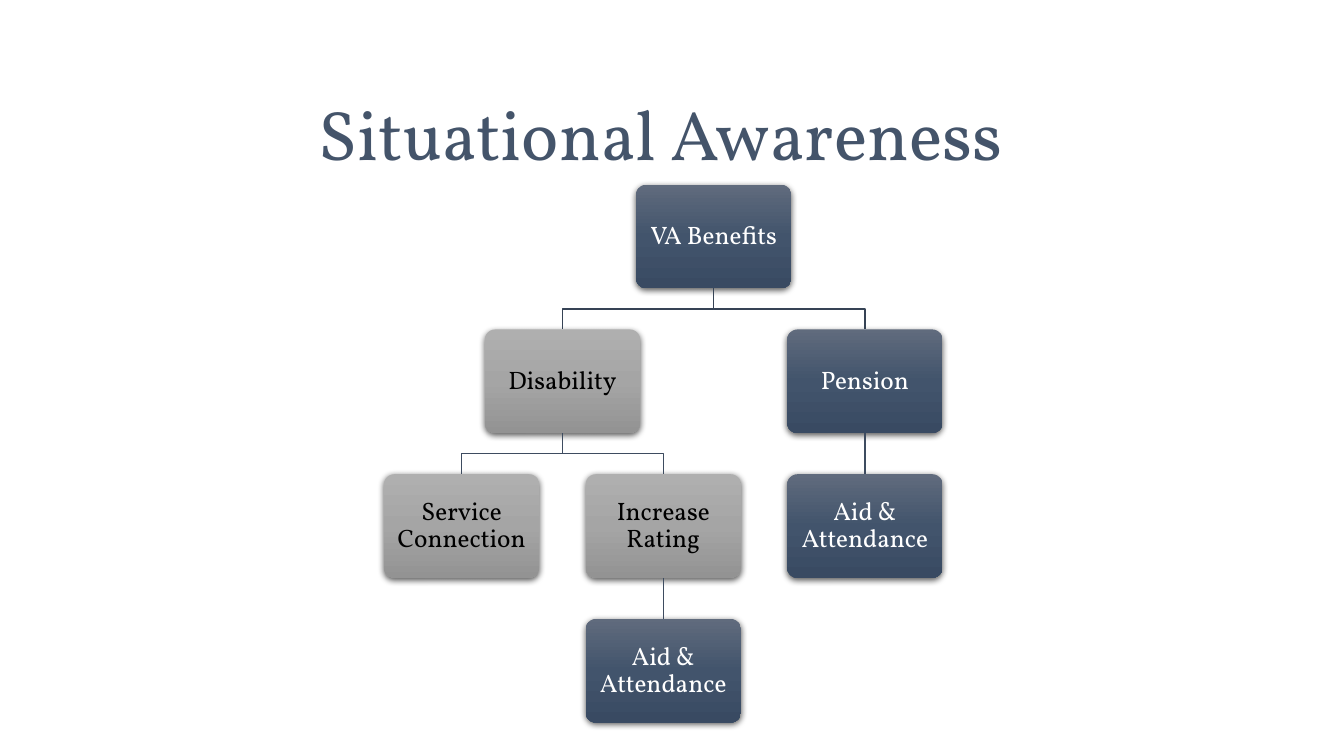
from dataclasses import dataclass

from lxml.etree import SubElement
from pptx import Presentation
from pptx.dml.color import RGBColor
from pptx.enum.shapes import MSO_CONNECTOR, MSO_SHAPE
from pptx.enum.text import MSO_ANCHOR, MSO_AUTO_SIZE, PP_ALIGN
from pptx.oxml.ns import qn
from pptx.util import Pt

FONT = "Vollkorn"
TITLE_COLOR = "44546A"
NAVY = ("606B7D", "42546C", "394A62")
GRAY = ("AFAFAF", "A5A5A5", "939393")
TEXT_ON = {NAVY: "FFFFFF", GRAY: "000000"}
TOP_LINK, LOWER_LINK = "364355", "3E4C60"

# Chart grid, in points
BOX_W, BOX_H = 111, 74
FIRST_CENTER, COLUMN_STEP = 329.8, 72
FIRST_TOP, ROW_STEP = 131.9, 103.4


@dataclass(frozen=True)
class Benefit:
    label: str
    column: float
    row: int
    shades: tuple[str, str, str]
    parent: str | None = None

    @property
    def center(self) -> float:
        return FIRST_CENTER + self.column * COLUMN_STEP

    @property
    def top(self) -> float:
        return FIRST_TOP + self.row * ROW_STEP


BENEFITS = {
    "benefits": Benefit("VA Benefits", 2.5, 0, NAVY),
    "disability": Benefit("Disability", 1, 1, GRAY, "benefits"),
    "service": Benefit("Service Connection", 0, 2, GRAY, "disability"),
    "increase": Benefit("Increase Rating", 2, 2, GRAY, "disability"),
    "increase_aid": Benefit("Aid & Attendance", 2, 3, NAVY, "increase"),
    "pension": Benefit("Pension", 4, 1, NAVY, "benefits"),
    "pension_aid": Benefit("Aid & Attendance", 4, 2, NAVY, "pension"),
}


def rgb(hex_color: str) -> RGBColor:
    return RGBColor.from_string(hex_color)


def write(frame, text: str, *, size: float, color: str, anchor: MSO_ANCHOR,
          spacing: float = 1.0) -> None:
    frame.word_wrap = True
    frame.vertical_anchor = anchor
    paragraph = frame.paragraphs[0]
    paragraph.alignment = PP_ALIGN.CENTER
    paragraph.line_spacing = spacing
    run = paragraph.add_run()
    run.text = text
    run.font.name = FONT
    run.font.size = Pt(size)
    run.font.color.rgb = rgb(color)


def fill_downward(shape, shades: tuple[str, str, str]) -> None:
    shape.fill.gradient()
    shape.fill.gradient_angle = 270
    stops = shape._element.spPr.find(qn("a:gradFill")).find(qn("a:gsLst"))
    for stop in list(stops):
        stops.remove(stop)
    for position, shade in zip((0, 50000, 100000), shades):
        stop = SubElement(stops, qn("a:gs"), pos=str(position))
        SubElement(stop, qn("a:srgbClr"), val=shade)


def drop_shadow(shape) -> None:
    shape.shadow.inherit = False
    effects = shape._element.spPr.find(qn("a:effectLst"))
    shadow = SubElement(effects, qn("a:outerShdw"), blurRad=str(Pt(4.5)),
                        dist=str(Pt(1.5)), dir="5400000", rotWithShape="0")
    black = SubElement(shadow, qn("a:srgbClr"), val="000000")
    SubElement(black, qn("a:alpha"), val="63000")


def draw_benefit(shapes, benefit: Benefit):
    box = shapes.add_shape(MSO_SHAPE.ROUNDED_RECTANGLE,
                           Pt(benefit.center - BOX_W / 2), Pt(benefit.top),
                           Pt(BOX_W), Pt(BOX_H))
    box.adjustments[0] = 0.1
    fill_downward(box, benefit.shades)
    box.line.fill.background()
    drop_shadow(box)
    frame = box.text_frame
    frame.margin_left = frame.margin_right = Pt(7.2)
    frame.margin_top = frame.margin_bottom = Pt(7.2)
    write(frame, benefit.label, size=18, color=TEXT_ON[benefit.shades],
          anchor=MSO_ANCHOR.MIDDLE, spacing=0.9)
    return box


def draw_link(shapes, parent: Benefit, child: Benefit, parent_box, child_box) -> None:
    start_y, end_y = parent.top + BOX_H, child.top
    if parent.column == child.column:
        link = shapes.add_connector(MSO_CONNECTOR.STRAIGHT, Pt(parent.center), Pt(start_y),
                                    Pt(child.center), Pt(end_y))
        link.begin_connect(parent_box, 2)
        link.end_connect(child_box, 0)
        SubElement(link._element.spPr, qn("a:effectLst"))
    else:
        fork_y = (start_y + end_y) / 2
        bend = shapes.build_freeform(Pt(parent.center), Pt(start_y))
        bend.add_line_segments([(Pt(parent.center), Pt(fork_y)),
                                (Pt(child.center), Pt(fork_y)),
                                (Pt(child.center), Pt(end_y))], close=False)
        link = bend.convert_to_shape()
        link.fill.background()
        link.shadow.inherit = False
    link.line.color.rgb = rgb(TOP_LINK if parent.row == 0 else LOWER_LINK)
    link.line.width = Pt(1)


def main() -> None:
    deck = Presentation()
    deck.slide_width, deck.slide_height = Pt(960), Pt(540)
    slide = deck.slides.add_slide(deck.slide_layouts[5])

    # Title
    title = slide.shapes.title
    title.left, title.top, title.width, title.height = Pt(175), Pt(61.2), Pt(594), Pt(67.7)
    write(title.text_frame, "Situational Awareness", size=50, color=TITLE_COLOR,
          anchor=MSO_ANCHOR.TOP)
    title.text_frame.auto_size = MSO_AUTO_SIZE.SHAPE_TO_FIT_TEXT

    # Benefit boxes
    boxes = {key: draw_benefit(slide.shapes, benefit) for key, benefit in BENEFITS.items()}

    # Links from each benefit to its parent
    for key, benefit in BENEFITS.items():
        if benefit.parent:
            draw_link(slide.shapes, BENEFITS[benefit.parent], benefit,
                      boxes[benefit.parent], boxes[key])

    deck.save("out.pptx")


if __name__ == "__main__":
    main()
